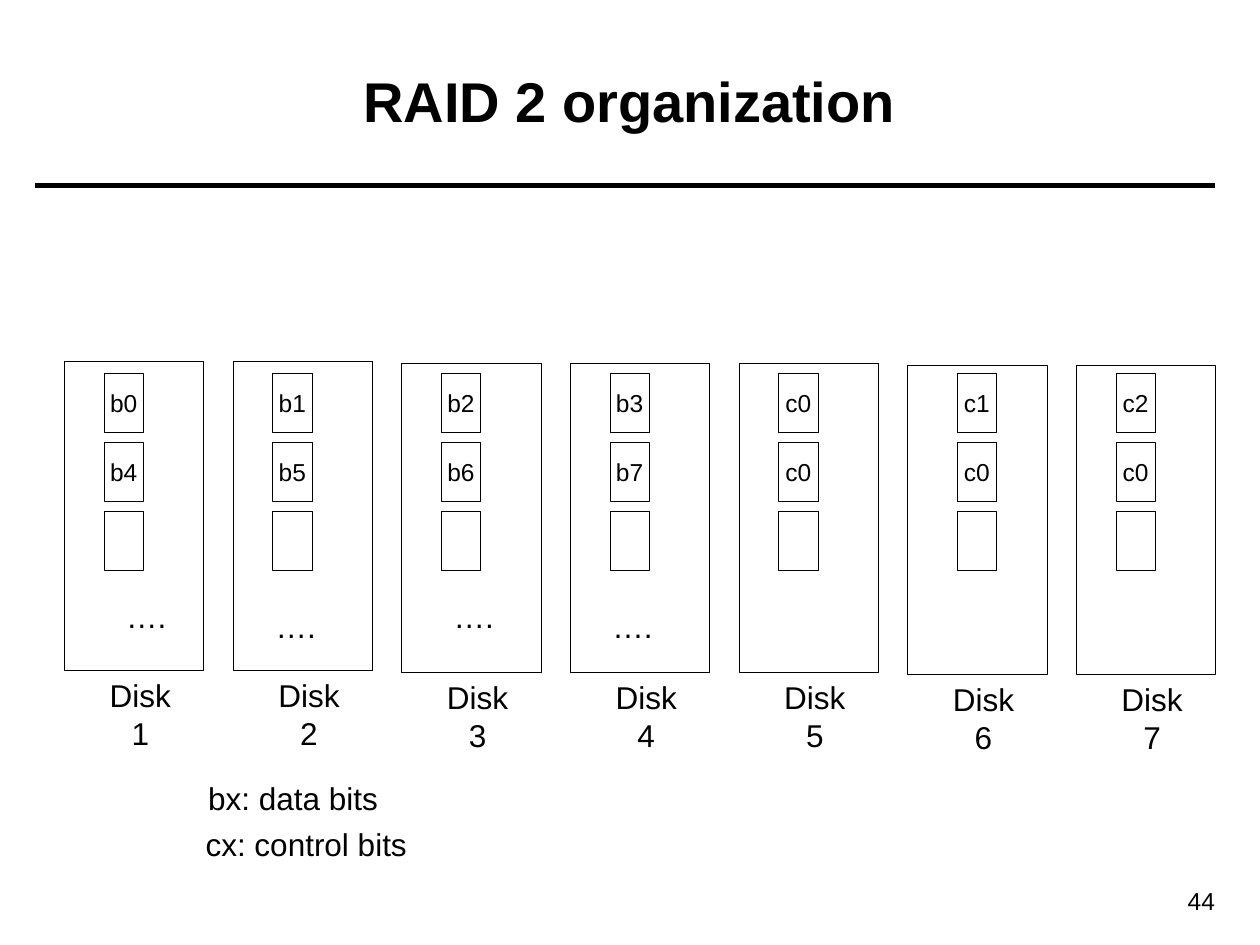
from dataclasses import dataclass

from lxml import etree
from pptx import Presentation
from pptx.dml.color import RGBColor
from pptx.enum import shapes, text
from pptx.oxml import ns
from pptx.util import Pt


@dataclass(frozen=True)
class Theme:
    font: str = "Arial"
    ink: RGBColor = RGBColor(0, 0, 0)
    title_size: float = 32
    label_size: float = 18
    block_size: float = 14
    outline: float = 0.25
    rule: float = 3


class SlideBuilder:
    def __init__(self, slide, theme):
        self.slide = slide
        self.theme = theme

    def set_words(self, frame, words, size, align, anchor, bold=False, wrap=False):
        frame.text = words
        frame.word_wrap = wrap
        frame.vertical_anchor = anchor
        paragraph = frame.paragraphs[0]
        paragraph.alignment = align
        for run in paragraph.runs:
            run.font.name = self.theme.font
            run.font.size = Pt(size)
            run.font.bold = bold
            run.font.color.rgb = self.theme.ink

    def label(self, words, left, top, width, height=28.8, size=None,
              align=text.PP_ALIGN.CENTER, anchor=text.MSO_ANCHOR.TOP, **style):
        caption = self.slide.shapes.add_textbox(Pt(left), Pt(top), Pt(width), Pt(height))
        self.set_words(caption.text_frame, words, size or self.theme.label_size,
                       align, anchor, **style)

    def box(self, left, top, width, height, words=""):
        outline = self.slide.shapes.add_shape(
            shapes.MSO_SHAPE.RECTANGLE, Pt(left), Pt(top), Pt(width), Pt(height))
        outline.shadow.inherit = False
        outline.fill.background()
        outline.line.color.rgb = self.theme.ink
        outline.line.width = Pt(self.theme.outline)
        if words:
            self.set_words(outline.text_frame, words, self.theme.block_size,
                           text.PP_ALIGN.CENTER, text.MSO_ANCHOR.MIDDLE)

    def rule(self, left, right, y):
        divider = self.slide.shapes.add_connector(
            shapes.MSO_CONNECTOR.STRAIGHT, Pt(left), Pt(y), Pt(right), Pt(y))
        divider.line.color.rgb = self.theme.ink
        divider.line.width = Pt(self.theme.rule)
        etree.SubElement(divider._element.spPr, ns.qn("a:effectLst"))


DISK_LEFT, DISK_PITCH = 36.8, 96.36
DISK_WIDTH, DISK_HEIGHT = 79.6, 176.4
BLOCK_TOP, BLOCK_PITCH = 213.2, 39.6
BLOCK_WIDTH, BLOCK_HEIGHT = 22.5, 33.8

# Per disk: top, offset of the blocks, stripes from top to bottom
DISKS = [
    (206.6, 22.7, ("b0", "b4", "")),
    (206.6, 22.7, ("b1", "b5", "")),
    (207.6, 22.7, ("b2", "b6", "")),
    (207.6, 22.7, ("b3", "b7", "")),
    (207.6, 22.7, ("c0", "c0", "")),
    (208.8, 28.4, ("c1", "c0", "")),
    (208.8, 22.7, ("c2", "c0", "")),
]
ELLIPSES = [(64.8, 337.7), (150.3, 343.4), (252, 337.7), (342.7, 343.4)]


def main():
    deck = Presentation()
    deck.slide_width, deck.slide_height = Pt(720), Pt(540)
    theme = Theme()
    page = SlideBuilder(deck.slides.add_slide(deck.slide_layouts[6]), theme)

    # Heading and page number
    page.rule(19.8, 694.5, 106)
    page.label("44", 626.4, 502.6, 75, 24.5, theme.block_size,
               text.PP_ALIGN.RIGHT, wrap=True)
    page.label("RAID 2 organization", 25.2, 12.2, 669, 90, theme.title_size,
               anchor=text.MSO_ANCHOR.MIDDLE, bold=True, wrap=True)

    # Disks with their striped blocks
    for index, (top, block_offset, stripes) in enumerate(DISKS):
        left = DISK_LEFT + index * DISK_PITCH
        page.box(left, top, DISK_WIDTH, DISK_HEIGHT)
        page.label(f"Disk {index + 1}", left + 11.4, top + DISK_HEIGHT, 64)
        for row, bit in enumerate(stripes):
            page.box(left + block_offset, BLOCK_TOP + row * BLOCK_PITCH,
                     BLOCK_WIDTH, BLOCK_HEIGHT, bit)

    # Continuation marks on the data disks
    for left, top in ELLIPSES:
        page.label("….", left, top, 37.4)

    # Legend
    page.label("bx: data bits", 111.6, 441.4, 111.6)
    page.label("cx: control bits", 110.2, 468, 129.6)

    deck.save("out.pptx")


if __name__ == "__main__":
    main()
